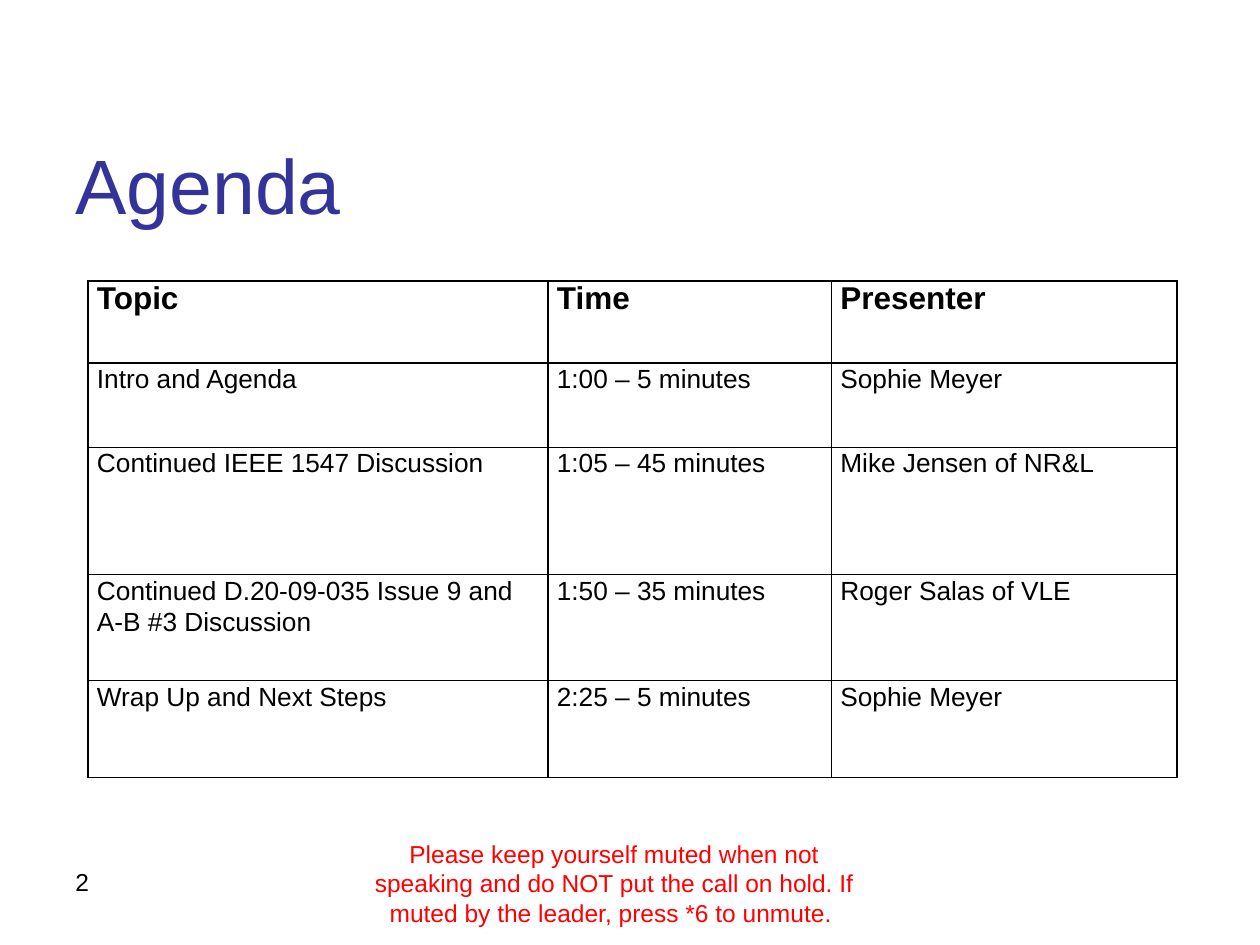
from dataclasses import dataclass
from typing import Any

from lxml import etree
from pptx import Presentation
from pptx import util as u
from pptx.dml.color import RGBColor
from pptx.enum import text
from pptx.oxml import ns

COLORS = {"title": "333399", "body": "000000", "notice": "FF0000", "paper": "FFFFFF"}

COLUMN_WIDTHS = [3.65, 2.25, 2.74]
ROW_HEIGHTS = [0.65, 0.67, 1.01, 0.84, 0.77]
AGENDA = [
    ["Topic", "Time", "Presenter"],
    ["Intro and Agenda", "1:00 – 5 minutes", "Sophie Meyer"],
    ["Continued IEEE 1547 Discussion", "1:05 – 45 minutes", "Mike Jensen of NR&L"],
    ["Continued D.20-09-035 Issue 9 and A-B #3 Discussion", "1:50 – 35 minutes",
     "Roger Salas of VLE"],
    ["Wrap Up and Next Steps", "2:25 – 5 minutes", "Sophie Meyer"],
]


@dataclass
class AgendaSlide:
    """Holds the style and the current slide, and adds each kind of element."""

    slide: Any
    font: str = "Arial"
    border_width: float = 1

    def add_run(self, paragraph, words, size, color, bold=False):
        run = paragraph.add_run()
        run.text = words
        run.font.name = self.font
        run.font.size = u.Pt(size)
        run.font.bold = bold
        run.font.color.rgb = RGBColor.from_string(COLORS[color])

    def add_text(self, box, words, size, color, align=text.PP_ALIGN.LEFT,
                 anchor=text.MSO_ANCHOR.TOP):
        shape = self.slide.shapes.add_textbox(*map(u.Inches, box))
        frame = shape.text_frame
        frame.word_wrap = True
        frame.vertical_anchor = anchor
        paragraph = frame.paragraphs[0]
        paragraph.alignment = align
        self.add_run(paragraph, words, size, color)

    def add_borders(self, cell):
        properties = cell._tc.get_or_add_tcPr()
        for position, side in enumerate(("lnL", "lnR", "lnT", "lnB")):
            line = etree.Element(ns.qn(f"a:{side}"), w=str(u.Pt(self.border_width)))
            fill = etree.SubElement(line, ns.qn("a:solidFill"))
            etree.SubElement(fill, ns.qn("a:srgbClr"), val=COLORS["body"])
            properties.insert(position, line)

    def add_table(self, left, top, rows, widths, heights):
        shape = self.slide.shapes.add_table(
            len(rows), len(widths), u.Inches(left), u.Inches(top),
            u.Inches(sum(widths)), u.Inches(sum(heights)))
        table = shape.table
        for column, width in zip(table.columns, widths):
            column.width = u.Inches(width)
        for index, (row, height, entries) in enumerate(zip(table.rows, heights, rows)):
            row.height = u.Inches(height)
            for cell, words in zip(row.cells, entries):
                self.fill_cell(cell, words, header=index == 0)

    def fill_cell(self, cell, words, header):
        cell.margin_left = cell.margin_right = u.Inches(0.07)
        cell.margin_top = cell.margin_bottom = 0
        cell.fill.solid()
        cell.fill.fore_color.rgb = RGBColor.from_string(COLORS["paper"])
        self.add_borders(cell)
        paragraph = cell.text_frame.paragraphs[0]
        if not header:
            paragraph.line_spacing = 1.07
        self.add_run(paragraph, words, 18 if header else 15, "body", bold=header)


def main():
    presentation = Presentation()
    presentation.slide_width = u.Inches(10)
    presentation.slide_height = u.Inches(7.5)
    agenda = AgendaSlide(presentation.slides.add_slide(presentation.slide_layouts[6]))
    agenda.add_text((0.5, 0.92, 9, 1.08), "Agenda", 44, "title",
                    anchor=text.MSO_ANCHOR.MIDDLE)
    agenda.add_text((0.5, 6.83, 0.4, 0.52), "2", 14, "body")
    agenda.add_table(0.7, 2.23, AGENDA, COLUMN_WIDTHS, ROW_HEIGHTS)
    agenda.add_text(
        (2.75, 6.61, 4.25, 0.52),
        "Please keep yourself muted when not speaking and do NOT put the call on hold. "
        "If muted by the leader, press *6 to unmute. ",
        14, "notice", align=text.PP_ALIGN.CENTER)
    presentation.save("out.pptx")


if __name__ == "__main__":
    main()
